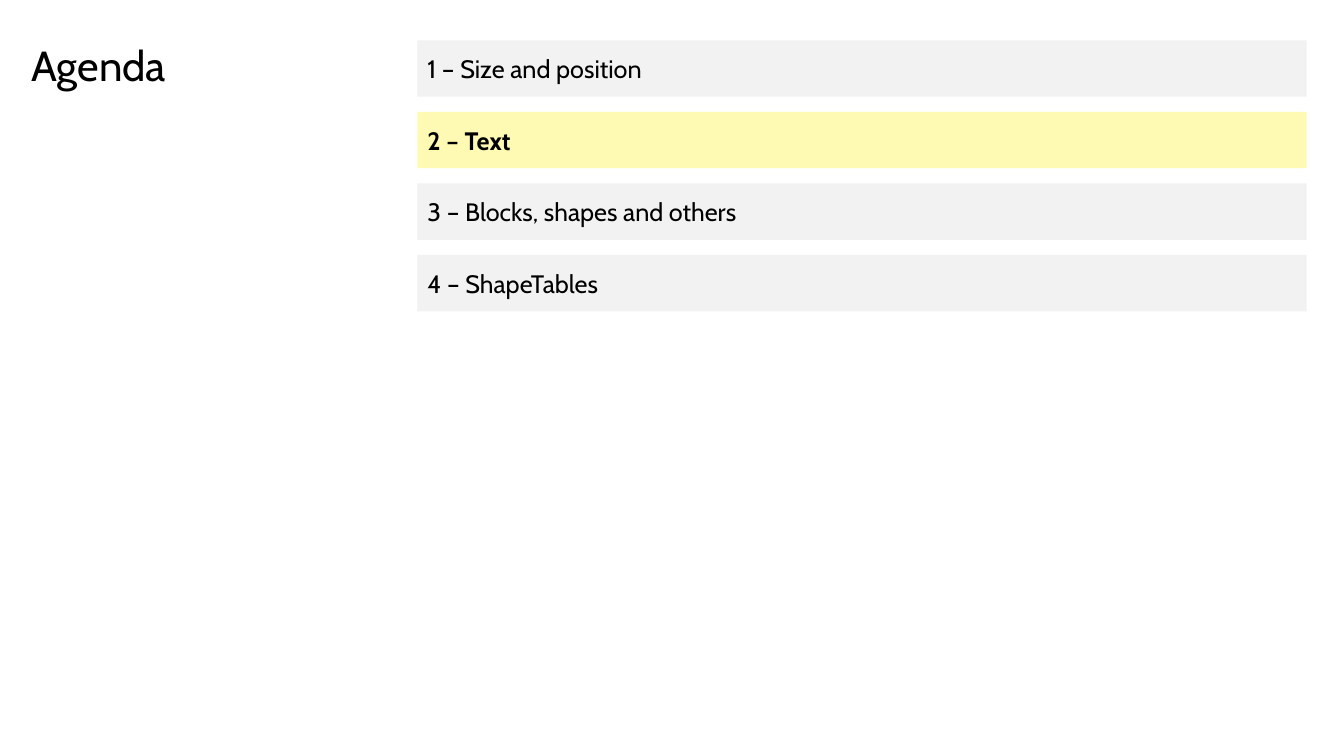
import pptx
import pptx.dml.color
import pptx.enum.shapes
import pptx.enum.text
import pptx.util
from dataclasses import dataclass

Inches = pptx.util.Inches
ALIGN = pptx.enum.text.PP_ALIGN
ANCHOR = pptx.enum.text.MSO_ANCHOR

TITLE = "Agenda"
TOPICS = [
    "1 – Size and position",
    "2 – Text",
    "3 – Blocks, shapes and others",
    "4 – ShapeTables",
]
ACTIVE = 1


@dataclass(frozen=True)
class Theme:
    font: str = "Cabin"
    ink: str = "000000"
    bar: str = "F2F2F2"
    mark: str = "FFFAB3"
    head: int = 30
    body: int = 18


THEME = Theme()
TOP, HIGH, STEP = 0.4, 0.56, 0.71
LEFT, WIDE = 4.14, 8.82


def color(code):
    return pptx.dml.color.RGBColor.from_string(code)


def write(shape, text, size, anchor, bold=False):
    frame = shape.text_frame
    frame.text = text
    frame.word_wrap = True
    frame.vertical_anchor = anchor
    line = frame.paragraphs[0]
    line.alignment = ALIGN.LEFT
    font = line.runs[0].font
    font.name = THEME.font
    font.size = pptx.util.Pt(size)
    font.bold = bold
    font.color.rgb = color(THEME.ink)


def add_title(slide):
    title = slide.shapes.title
    title.left, title.top = Inches(0.21), Inches(TOP)
    title.width, title.height = Inches(4.07), Inches(HIGH)
    write(title, TITLE, THEME.head, ANCHOR.TOP)
    title.text_frame.auto_size = pptx.enum.text.MSO_AUTO_SIZE.SHAPE_TO_FIT_TEXT
    title.text_frame.paragraphs[0].line_spacing = 0.9


def add_topic(slide, index, text):
    active = index == ACTIVE
    bar = slide.shapes.add_shape(
        pptx.enum.shapes.MSO_SHAPE.RECTANGLE,
        Inches(LEFT), Inches(TOP + index * STEP), Inches(WIDE), Inches(HIGH),
    )
    bar.shadow.inherit = False
    bar.line.fill.background()
    bar.fill.solid()
    bar.fill.fore_color.rgb = color(THEME.mark if active else THEME.bar)
    write(bar, text, THEME.body, ANCHOR.MIDDLE, active)


def main():
    deck = pptx.Presentation()
    deck.slide_width, deck.slide_height = Inches(13.33), Inches(7.5)
    slide = deck.slides.add_slide(deck.slide_layouts.get_by_name("Title Only"))
    add_title(slide)
    for index, text in enumerate(TOPICS):
        add_topic(slide, index, text)
    deck.save("out.pptx")


if __name__ == "__main__":
    main()
